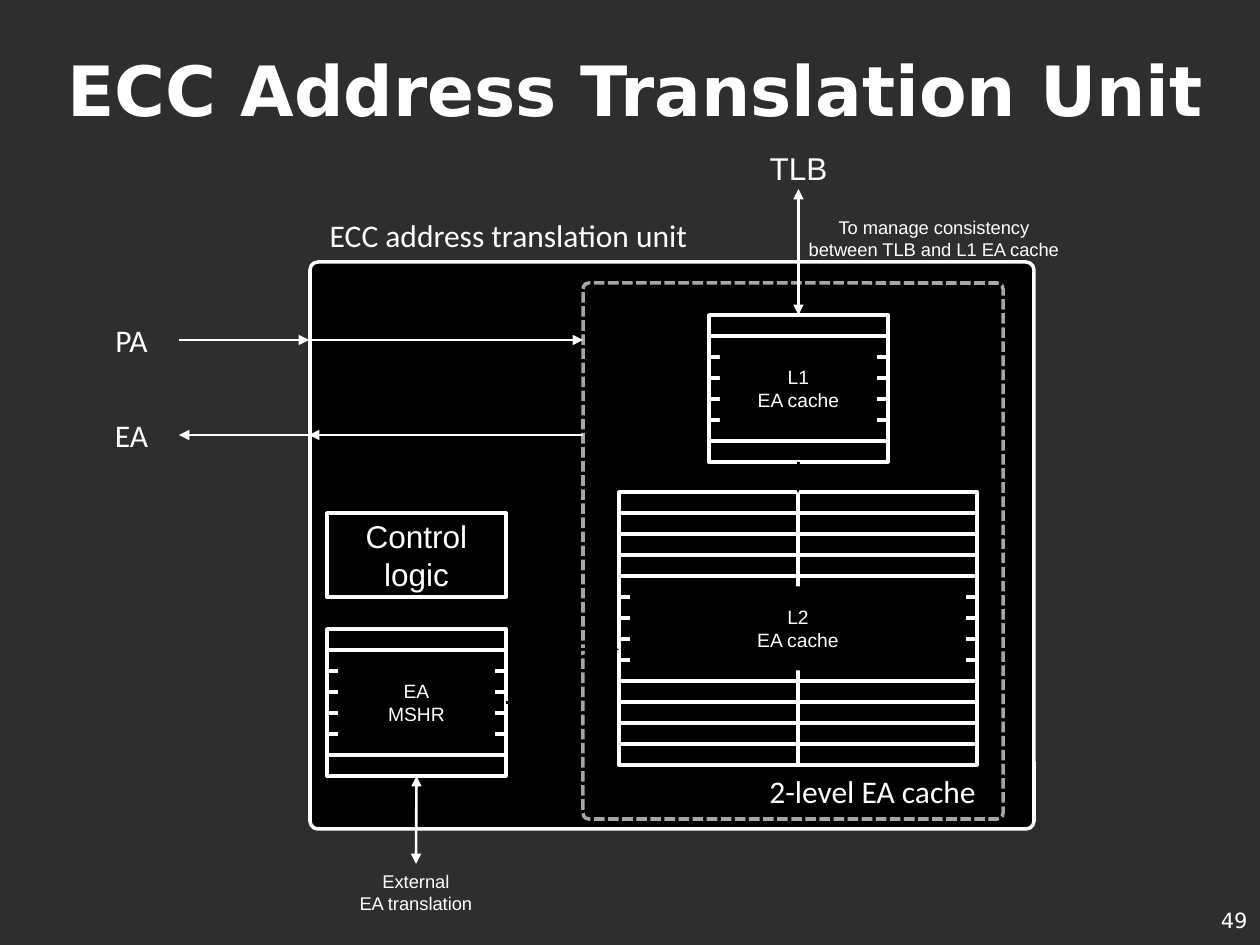
from dataclasses import dataclass
from typing import Any

from pptx import Presentation
from pptx.dml.color import RGBColor
from pptx.enum.dml import MSO_LINE
from pptx.enum.shapes import MSO_CONNECTOR as CONNECTOR, MSO_SHAPE as SHAPE
from pptx.enum.text import MSO_ANCHOR as ANCHOR, MSO_AUTO_SIZE as AUTO_SIZE, PP_ALIGN as ALIGN
from pptx.oxml.ns import qn
from pptx.util import Pt
from lxml.etree import SubElement

PX = 914400 / 126
BACKGROUND = RGBColor(0x2E, 0x2E, 0x2E)
BLACK = RGBColor(0, 0, 0)
WHITE = RGBColor(0xFF, 0xFF, 0xFF)
GRAY = RGBColor(0xA6, 0xA6, 0xA6)

ROW_WIDTH, ROW_HEIGHT = 179, 21
COVER_INSET, COVER_ROWS = 11, 4
TOP, LEFT, BOTTOM, RIGHT = range(4)


def emu(*lengths):
    return [round(length * PX) for length in lengths]


@dataclass
class Diagram:
    slide: Any
    text_color: RGBColor = WHITE
    border_width: float = 2
    arrow_width: float = 1.5

    def caption(self, shape, text, size, font, align=ALIGN.CENTER, anchor=ANCHOR.MIDDLE, bold=False):
        frame = shape.text_frame
        frame.text = text
        frame.word_wrap = True
        frame.auto_size = AUTO_SIZE.NONE
        frame.vertical_anchor = anchor
        for paragraph in frame.paragraphs:
            paragraph.alignment = align
            for run in paragraph.runs:
                run.font.size = Pt(size)
                run.font.name = font
                run.font.bold = bold
                run.font.color.rgb = self.text_color

    def title(self, text, *box):
        shape = self.slide.shapes.title
        shape.left, shape.top, shape.width, shape.height = emu(*box)
        self.caption(shape, text, 39.6, "DejaVu Sans", bold=True)

    def label(self, text, box, size, font, align=ALIGN.CENTER, anchor=ANCHOR.TOP):
        shape = self.slide.shapes.add_textbox(*emu(*box))
        self.caption(shape, text, size, font, align, anchor)
        return shape

    def box(self, box, kind=SHAPE.RECTANGLE, fill=BLACK, line=WHITE, shapes=None):
        shape = (shapes or self.slide.shapes).add_shape(kind, *emu(*box))
        shape.shadow.inherit = False
        if fill is None:
            shape.fill.background()
        else:
            shape.fill.solid()
            shape.fill.fore_color.rgb = fill
        if line is None:
            shape.line.fill.background()
        else:
            shape.line.color.rgb = line
            shape.line.width = Pt(self.border_width)
        if kind == SHAPE.ROUNDED_RECTANGLE:
            shape.adjustments[0] = 0.014
        return shape

    def memory(self, text, left, top, row_count, column_count=1):
        """Draw a grouped grid of entries with a captioned cover; return its columns."""
        shapes = self.slide.shapes.add_group_shape().shapes
        columns = [
            [self.box((left + column * ROW_WIDTH, top + row * ROW_HEIGHT, ROW_WIDTH, ROW_HEIGHT),
                      shapes=shapes) for row in range(row_count)]
            for column in range(column_count)
        ]
        cover = self.box((left + COVER_INSET, top + (row_count - COVER_ROWS) / 2 * ROW_HEIGHT,
                          column_count * ROW_WIDTH - 2 * COVER_INSET, COVER_ROWS * ROW_HEIGHT),
                         line=None, shapes=shapes)
        self.caption(cover, text, 11, "Arial")
        return columns

    def arrow(self, start, end, color=WHITE, both=False, kind=CONNECTOR.STRAIGHT,
              begin_join=None, end_join=None):
        connector = self.slide.shapes.add_connector(kind, *emu(*start, *end))
        connector.line.color.rgb = color
        connector.line.width = Pt(self.arrow_width)
        if begin_join:
            connector.begin_connect(*begin_join)
        if end_join:
            connector.end_connect(*end_join)
        properties = connector._element.spPr
        line = properties.find(qn("a:ln"))
        for tag in ("a:headEnd", "a:tailEnd") if both else ("a:tailEnd",):
            SubElement(line, qn(tag), type="triangle")
        SubElement(properties, qn("a:effectLst"))


def main():
    presentation = Presentation()
    presentation.slide_width, presentation.slide_height = emu(1260, 945)
    slide = presentation.slides.add_slide(presentation.slide_layouts[5])
    slide.background.fill.solid()
    slide.background.fill.fore_color.rgb = BACKGROUND
    diagram = Diagram(slide)

    # Title and page number
    diagram.title("ECC Address Translation Unit", 21, 10, 1229, 158)
    diagram.label("49", (966, 895, 294, 50), 12, "DejaVu Sans", ALIGN.RIGHT, ANCHOR.MIDDLE)

    # Translation unit and the dashed frame of the two-level cache
    diagram.box((310, 262, 724, 567), SHAPE.ROUNDED_RECTANGLE)
    cache_frame = diagram.box((583, 283, 420, 536), SHAPE.ROUNDED_RECTANGLE, fill=None, line=GRAY)
    cache_frame.line.dash_style = MSO_LINE.SQUARE_DOT

    # Memories and control logic
    (l1_rows,) = diagram.memory("L1\nEA cache", 709, 315, 7)
    l2_rows, _ = diagram.memory("L2\nEA cache", 619, 492, 13, column_count=2)
    (mshr_rows,) = diagram.memory("EA\nMSHR", 327, 629, 7)
    control = diagram.box((327, 513, ROW_WIDTH, 84))
    diagram.caption(control, "Control logic", 18, "Arial")

    # Labels
    diagram.label("2-level EA cache", (731, 766, 283, 50), 18, "Calibri")
    diagram.label("ECC address translation unit", (267, 210, 483, 50), 18, "Calibri")
    diagram.label("To manage consistency between TLB and L1 EA cache",
                  (793, 210, 282, 57), 10.5, "Arial")
    tlb = diagram.label("TLB", (709, 147, ROW_WIDTH, 42), 18, "Arial", anchor=ANCHOR.MIDDLE)
    physical = diagram.label("PA", (84, 315, 95, 50), 18, "Calibri")
    effective = diagram.label("EA", (84, 410, 95, 50), 18, "Calibri")
    external = diagram.label("External\nEA translation", (316, 864, 200, 57), 10.5, "Arial")

    # Address input and output
    diagram.arrow((179, 340), (309, 340), begin_join=(physical, RIGHT))
    diagram.arrow((309, 340), (583, 340))
    diagram.arrow((583, 435), (309, 435))
    diagram.arrow((309, 435), (179, 435), end_join=(effective, RIGHT))

    # Links to the outside
    diagram.arrow((798, 189), (798, 315), both=True,
                  begin_join=(tlb, BOTTOM), end_join=(l1_rows[0], TOP))
    diagram.arrow((416, 776), (416, 864), both=True,
                  begin_join=(mshr_rows[-1], BOTTOM), end_join=(external, TOP))

    # Links between the memories
    diagram.arrow((506, 702), (619, 650), BLACK, kind=CONNECTOR.ELBOW,
                  begin_join=(mshr_rows[3], RIGHT), end_join=(l2_rows[7], LEFT))
    diagram.arrow((798, 462), (798, 493), BLACK, begin_join=(l1_rows[-1], BOTTOM))

    presentation.save("out.pptx")


if __name__ == "__main__":
    main()
